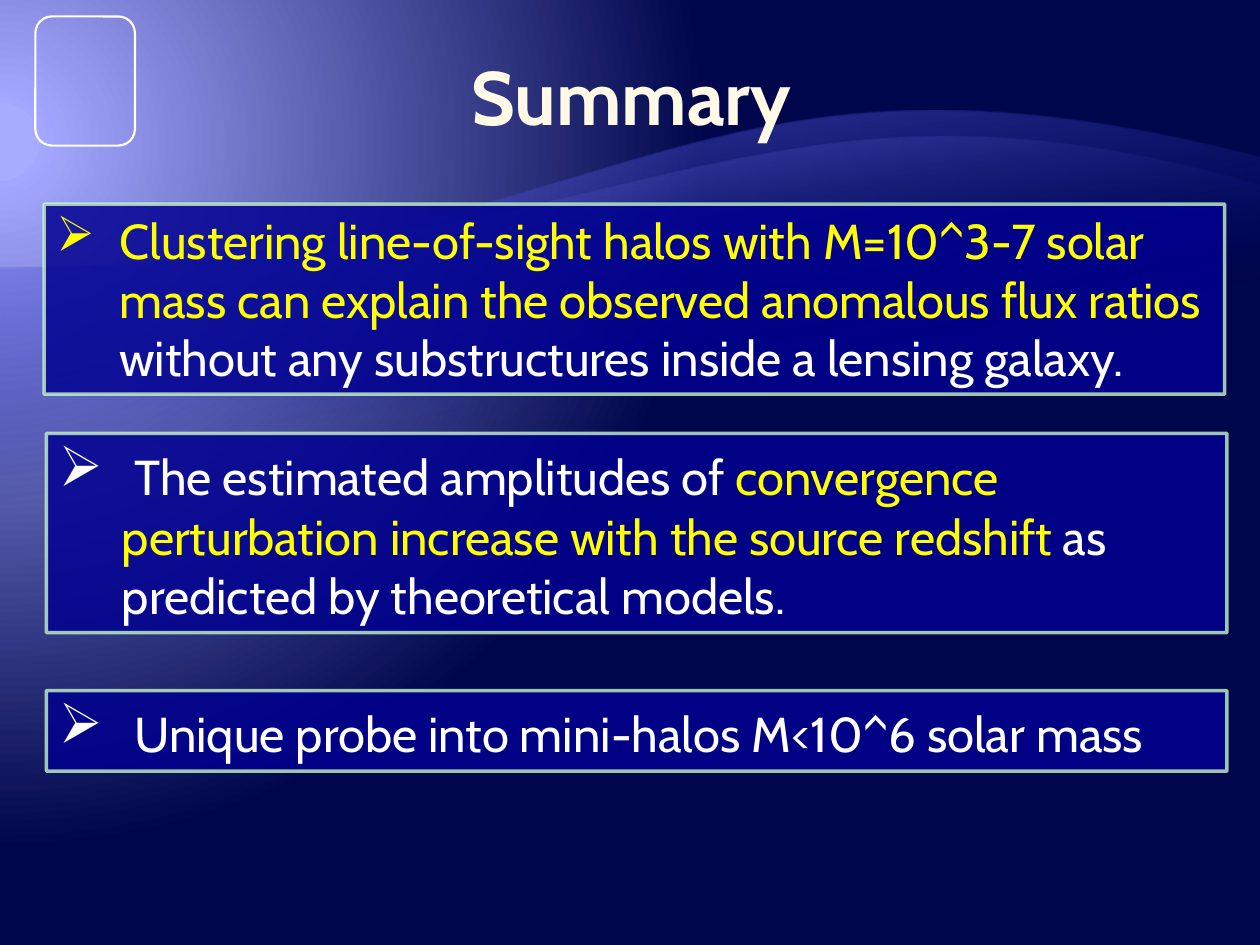
from dataclasses import dataclass

from lxml.etree import SubElement
from pptx import Presentation
from pptx.dml.color import RGBColor
from pptx.enum.shapes import MSO_SHAPE
from pptx.enum.text import MSO_ANCHOR, MSO_AUTO_SIZE, PP_ALIGN
from pptx.oxml.ns import qn
from pptx.util import Pt


@dataclass(frozen=True)
class Theme:
    font: str = "Cabin"
    title: str = "FFF9E5"
    body: str = "FFFFFF"
    accent: str = "FFFF00"
    panel: str = "000090"
    border: str = "CCFFCC"
    glow: str = "A8ACFF"
    glow_edge: str = "A3A7FF"
    night: str = "00064B"
    wave_base: str = "000D9E"
    wave_crest: str = "797FFF"
    title_size: float = 43.2
    body_size: float = 28
    lead_size: float = 32


THEME = Theme()


@dataclass(frozen=True)
class Phrase:
    text: str
    color: str = THEME.body
    size: float = THEME.body_size


@dataclass(frozen=True)
class Finding:
    left: float
    top: float
    height: float
    phrases: tuple[Phrase, ...]


@dataclass(frozen=True)
class Wave:
    left_y: float
    bottom: float
    control: tuple[float, float]
    right_y: float
    crest: str
    opacity: int


@dataclass(frozen=True)
class Stop:
    position: int
    color: str
    opacity: int = 100


SLIDE_W, SLIDE_H = 720, 540
PANEL_W = 674.6
INDENT = 36
LEAD = Phrase(" ", size=THEME.lead_size)

WAVES = (
    Wave(153.4, 527.8, (384.5, 3.6), 90, THEME.wave_crest, 55),
    Wave(153.4, 458.6, (430.6, 22.3), 105.8, THEME.glow_edge, 30),
)

FINDINGS = (
    Finding(25.2, 116.6, 108.7, (
        Phrase("Clustering line-of-sight halos with M=10^3-7 solar mass can "
               "explain the observed anomalous flux ratios ", THEME.accent),
        Phrase("without any substructures inside a lensing galaxy."),
    )),
    Finding(26.6, 247.7, 113.8, (
        LEAD,
        Phrase("The estimated amplitudes of "),
        Phrase("convergence perturbation increase with the source redshift ",
               THEME.accent),
        Phrase("as predicted by theoretical models."),
    )),
    Finding(26.6, 394.6, 46.1, (
        LEAD,
        Phrase("Unique probe into mini-halos M<10^6 solar mass"),
    )),
)


def apply(target, values: dict) -> None:
    for name, value in values.items():
        setattr(target, name, value)


def add_xml(parent, tag: str, **attributes):
    return SubElement(parent, qn(tag), {k: str(v) for k, v in attributes.items()})


def set_opacity(element, percent: int) -> None:
    """Make every plain colour under the element partly transparent."""
    for color in element.iter(qn("a:srgbClr")):
        add_xml(color, "a:alpha", val=percent * 1000)


def start_gradient(owner, fill, stops: tuple[Stop, ...]):
    """Give the fill its stops and return the element awaiting a direction."""
    fill.gradient()
    gradient = owner.element.find(".//" + qn("a:gradFill"))
    for child in list(gradient):
        gradient.remove(child)
    stop_list = add_xml(gradient, "a:gsLst")
    for stop in stops:
        mark = add_xml(stop_list, "a:gs", pos=stop.position * 1000)
        color = add_xml(mark, "a:srgbClr", val=stop.color)
        if stop.opacity < 100:
            add_xml(color, "a:alpha", val=stop.opacity * 1000)
    return gradient


def paint_background(slide) -> None:
    gradient = start_gradient(slide, slide.background.fill, (
        Stop(5, THEME.glow), Stop(5, THEME.glow_edge), Stop(90, THEME.night)))
    direction = add_xml(gradient, "a:path", **{"path": "circle"})
    add_xml(direction, "a:fillToRect", l=20000, t=30000, r=135000, b=100000)


def add_wave(slide, wave: Wave) -> None:
    """Draw a closed outline whose upper edge is one cubic curve."""
    end = (SLIDE_W, wave.right_y)
    builder = slide.shapes.build_freeform(Pt(SLIDE_W), Pt(wave.bottom), scale=1.0)
    corners = ((0, wave.bottom), (0, wave.left_y), end)
    builder.add_line_segments([(Pt(x), Pt(y)) for x, y in corners], close=True)
    shape = builder.convert_to_shape()
    shape.shadow.inherit = False
    shape.line.fill.background()

    edge = shape.element.findall(".//" + qn("a:lnTo"))[-1]
    curve = add_xml(edge.getparent(), "a:cubicBezTo")
    for x, y in ((SLIDE_W / 2, wave.left_y), wave.control, end):
        add_xml(curve, "a:pt", x=Pt(x), y=Pt(y) - shape.top)
    edge.getparent().replace(edge, curve)

    gradient = start_gradient(shape, shape.fill, (
        Stop(65, THEME.wave_base, 0), Stop(100, wave.crest, wave.opacity)))
    add_xml(gradient, "a:lin", ang=260 * 60000, scaled=0)


def add_phrase(paragraph, phrase: Phrase, bold: bool = False) -> None:
    run = paragraph.add_run()
    run.text = phrase.text
    apply(run.font, {"name": THEME.font, "size": Pt(phrase.size), "bold": bold})
    run.font.color.rgb = RGBColor.from_string(phrase.color)


def add_title(slide, text: str) -> None:
    box = slide.shapes.add_textbox(Pt(36.7), Pt(25.9), Pt(648), Pt(55.4))
    apply(box.text_frame, {
        "word_wrap": True, "vertical_anchor": MSO_ANCHOR.BOTTOM,
        "margin_left": 0, "margin_right": 0,
        "margin_top": Pt(0.7), "margin_bottom": Pt(0.7)})
    paragraph = box.text_frame.paragraphs[0]
    paragraph.alignment = PP_ALIGN.CENTER
    add_phrase(paragraph, Phrase(text, THEME.title, THEME.title_size), bold=True)


def add_corner_frame(slide) -> None:
    frame = slide.shapes.add_shape(
        MSO_SHAPE.ROUNDED_RECTANGLE, Pt(20.2), Pt(9.4), Pt(56.9), Pt(73.8))
    frame.shadow.inherit = False
    frame.fill.background()
    frame.line.color.rgb = RGBColor.from_string(THEME.body)
    frame.line.width = Pt(1.25)


def add_finding(slide, finding: Finding) -> None:
    panel = slide.shapes.add_shape(
        MSO_SHAPE.RECTANGLE, Pt(finding.left), Pt(finding.top),
        Pt(PANEL_W), Pt(finding.height))
    panel.shadow.inherit = False
    panel.fill.solid()
    panel.fill.fore_color.rgb = RGBColor.from_string(THEME.panel)
    set_opacity(panel.element, 83)
    panel.line.color.rgb = RGBColor.from_string(THEME.border)
    panel.line.width = Pt(2)
    set_opacity(panel.element.find(".//" + qn("a:ln")), 76)

    apply(panel.text_frame, {
        "word_wrap": True, "vertical_anchor": MSO_ANCHOR.TOP,
        "auto_size": MSO_AUTO_SIZE.SHAPE_TO_FIT_TEXT})
    paragraph = panel.text_frame.paragraphs[0]
    paragraph.alignment = PP_ALIGN.LEFT
    for phrase in finding.phrases:
        add_phrase(paragraph, phrase)
    bullet = paragraph._p.get_or_add_pPr()
    apply_indent = {"marL": Pt(INDENT), "indent": -Pt(INDENT)}
    for name, value in apply_indent.items():
        bullet.set(name, str(value))
    add_xml(bullet, "a:buChar", char="➢")


def main() -> None:
    deck = Presentation()
    apply(deck, {"slide_width": Pt(SLIDE_W), "slide_height": Pt(SLIDE_H)})
    slide = deck.slides.add_slide(deck.slide_layouts[6])
    paint_background(slide)
    for wave in WAVES:
        add_wave(slide, wave)
    add_title(slide, "Summary")
    add_corner_frame(slide)
    for finding in FINDINGS:
        add_finding(slide, finding)
    deck.save("out.pptx")


if __name__ == "__main__":
    main()
